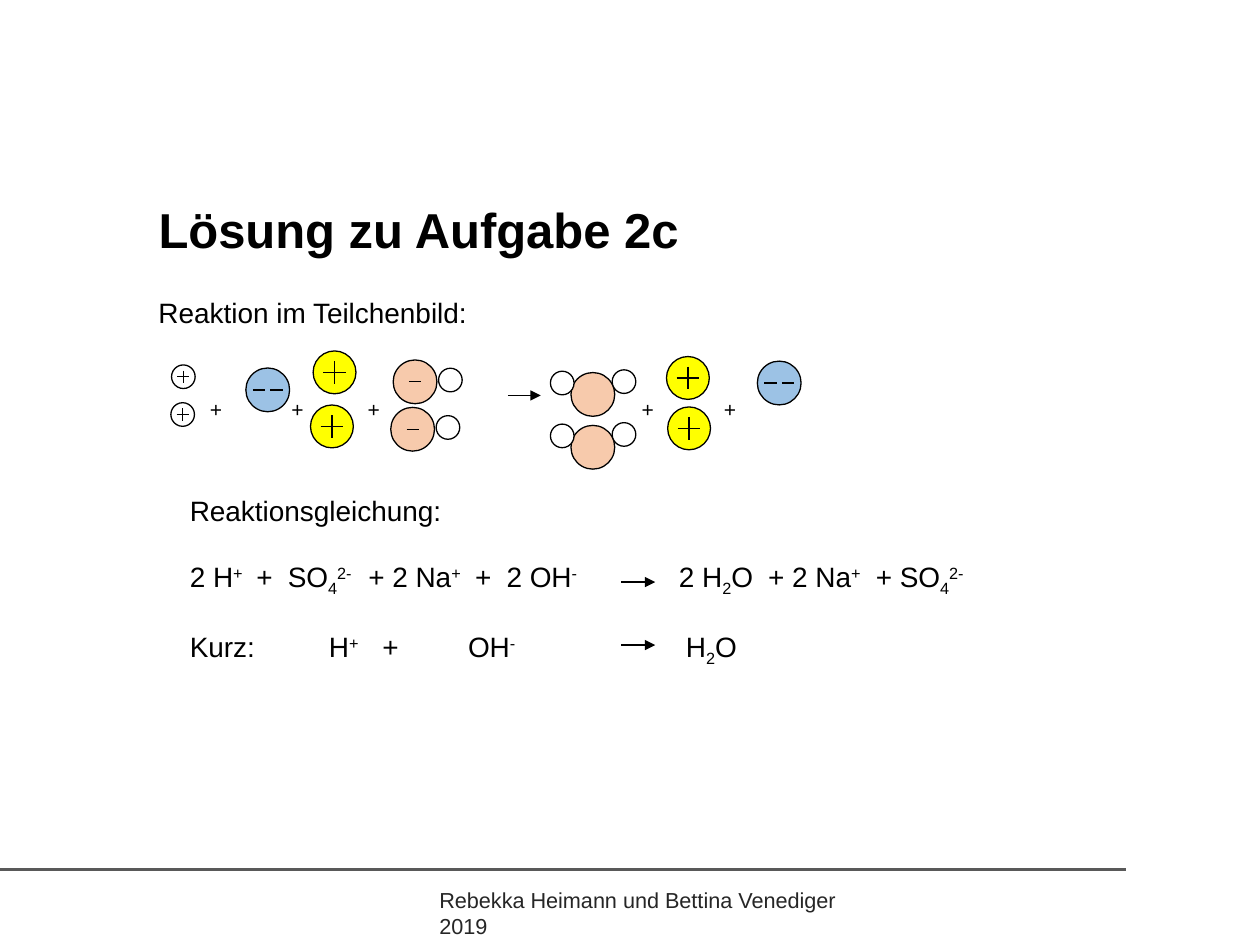
from lxml import etree
from pptx import Presentation
from pptx.dml.color import RGBColor
from pptx.enum.shapes import MSO_CONNECTOR, MSO_SHAPE
from pptx.oxml.ns import qn
from pptx.util import Pt

STRAIGHT = MSO_CONNECTOR.STRAIGHT
OVAL = MSO_SHAPE.OVAL
BLACK = RGBColor(0x00, 0x00, 0x00)
WHITE = RGBColor(0xFF, 0xFF, 0xFF)
DARK_GRAY = RGBColor(0x26, 0x26, 0x26)
RULE_GRAY = RGBColor(0x59, 0x59, 0x59)
SULFATE_BLUE = RGBColor(0x9C, 0xC2, 0xE5)
SODIUM_YELLOW = RGBColor(0xFF, 0xFF, 0x00)
OXYGEN_ORANGE = RGBColor(0xF7, 0xCA, 0xAC)

BASELINES = {"^": "30000", "_": "-25000"}
HYDROGEN_SIZE = 13.5
ION_SIZE = 25


def add_line(slide, start, end, color=BLACK, width=0.75, arrow=False):
    points = [Pt(value) for value in (*start, *end)]
    line = slide.shapes.add_connector(STRAIGHT, *points)
    line.line.color.rgb = color
    line.line.width = Pt(width)
    properties = line._element.spPr
    if arrow:
        etree.SubElement(properties.find(qn("a:ln")), qn("a:tailEnd"), type="triangle")
    etree.SubElement(properties, qn("a:effectLst"))


def add_text(slide, box, wrap=False):
    frame = slide.shapes.add_textbox(*[Pt(value) for value in box]).text_frame
    frame.word_wrap = wrap
    return frame


def fill_paragraph(paragraph, text, size, color=BLACK, bold=False, tabs=(), before=0):
    """Write text whose parts, split at |, are raised by ^ or lowered by _."""
    if before:
        paragraph.space_before = Pt(before)
    if tabs:
        tab_list = etree.SubElement(paragraph._p.get_or_add_pPr(), qn("a:tabLst"))
        for position in tabs:
            etree.SubElement(tab_list, qn("a:tab"), pos=str(Pt(position)), algn="l")
    for part in text.split("|"):
        run = paragraph.add_run()
        run.text = part.lstrip("^_")
        for name, value in {"name": "Arial", "size": Pt(size), "bold": bold}.items():
            setattr(run.font, name, value)
        run.font.color.rgb = color
        if part[0] in BASELINES:
            run._r.get_or_add_rPr().set("baseline", BASELINES[part[0]])


def add_particle(slide, center, size, color):
    x, y = center
    circle = slide.shapes.add_shape(
        OVAL, Pt(x - size / 2), Pt(y - size / 2), Pt(size), Pt(size))
    circle.shadow.inherit = False
    circle.fill.solid()
    circle.fill.fore_color.rgb = color
    circle.line.color.rgb = BLACK
    circle.line.width = Pt(0.75)


def add_minus(slide, center, length=7):
    x, y = center
    add_line(slide, (x - length / 2, y), (x + length / 2, y))


def add_plus(slide, center, length):
    x, y = center
    add_minus(slide, center, length)
    add_line(slide, (x, y - length / 2), (x, y + length / 2))


def add_hydrogen(slide, center):
    add_particle(slide, center, HYDROGEN_SIZE, WHITE)


def add_proton(slide, center):
    add_hydrogen(slide, center)
    add_plus(slide, center, 7)


def add_sodium(slide, center):
    add_particle(slide, center, 24.5, SODIUM_YELLOW)
    add_plus(slide, center, 13)


def add_sulfate(slide, center):
    x, y = center
    add_particle(slide, center, ION_SIZE, SULFATE_BLUE)
    for shift in (-5, 5):
        add_minus(slide, (x + shift, y))


def add_hydroxide(slide, center):
    x, y = center
    add_particle(slide, center, ION_SIZE, OXYGEN_ORANGE)
    add_hydrogen(slide, (x + 20.2, y - 1))
    add_minus(slide, center)


def add_water(slide, center):
    x, y = center
    add_particle(slide, center, ION_SIZE, OXYGEN_ORANGE)
    add_hydrogen(slide, (x - 17.5, y - 6.5))
    add_hydrogen(slide, (x + 17.8, y - 7.3))


def add_title(slide, box):
    fill_paragraph(add_text(slide, box).paragraphs[0], "Lösung zu Aufgabe 2c", 28, bold=True)


def add_particle_model(slide, box):
    left, top = box[:2]
    frame = add_text(slide, box)
    fill_paragraph(frame.paragraphs[0], "Reaktion im Teilchenbild:", 16)
    fill_paragraph(frame.add_paragraph(), "\t+\t+\t+\t+\t+", 12,
                   tabs=(29.3, 76, 119.5, 276, 323), before=38.2)
    particles = [
        (add_proton, [(21.3, 49.7), (20.9, 71.3)]),
        (add_sulfate, [(69.5, 57.2), (361.8, 53.3)]),
        (add_sodium, [(107.7, 47.2), (106.2, 78.1), (309.6, 50.4), (310.3, 79.2)]),
        (add_hydroxide, [(153.7, 52.6), (152.3, 79.7)]),
        (add_water, [(255.3, 59.8), (255.3, 90)]),
    ]
    for add_kind, centers in particles:
        for x, y in centers:
            add_kind(slide, (left + x, top + y))
    add_line(slide, (left + 206.7, top + 60.4), (left + 225.5, top + 60.4), arrow=True)


def add_equations(slide, box):
    left, top = box[:2]
    frame = add_text(slide, box)
    fill_paragraph(frame.paragraphs[0], "Reaktionsgleichung:", 16)
    equations = [
        ("2 H|^+|\t+\tSO|_4|^2-|\t+ 2 Na|^+|\t+\t2 OH|^-|\t2 H|_2|O\t+ 2 Na|^+|\t+ SO|_4|^2-",
         (38, 56, 102, 163, 181, 279.5, 330.5, 392), 54),
        ("Kurz:\tH|^+|\t+\tOH|^-|\tH|_2|O", (79.5, 110, 159, 283.5), 90),
    ]
    for text, tabs, arrow_y in equations:
        fill_paragraph(frame.add_paragraph(), text, 16, tabs=tabs, before=18.4)
        y = top + arrow_y
        add_line(slide, (left + 253.6, y), (left + 273, y), arrow=True)


def add_footer(slide, box):
    left, top, width, height = box
    add_line(slide, (0, top - 6.2), (643.7, top - 6.2), RULE_GRAY, 1.5)
    frame = add_text(slide, box, wrap=True)
    fill_paragraph(frame.paragraphs[0], "Rebekka Heimann und Bettina Venediger 2019",
                   12.4, DARK_GRAY)


def main():
    presentation = Presentation()
    presentation.slide_width = Pt(720)
    presentation.slide_height = Pt(540)
    slide = presentation.slides.add_slide(presentation.slide_layouts[6])
    add_title(slide, (83.5, 110.4, 315, 40))
    add_particle_model(slide, (83.5, 165.6, 377, 80))
    add_equations(slide, (101.4, 278.6, 477, 110))
    add_footer(slide, (244, 503, 269, 36))
    presentation.save("out.pptx")


if __name__ == "__main__":
    main()
